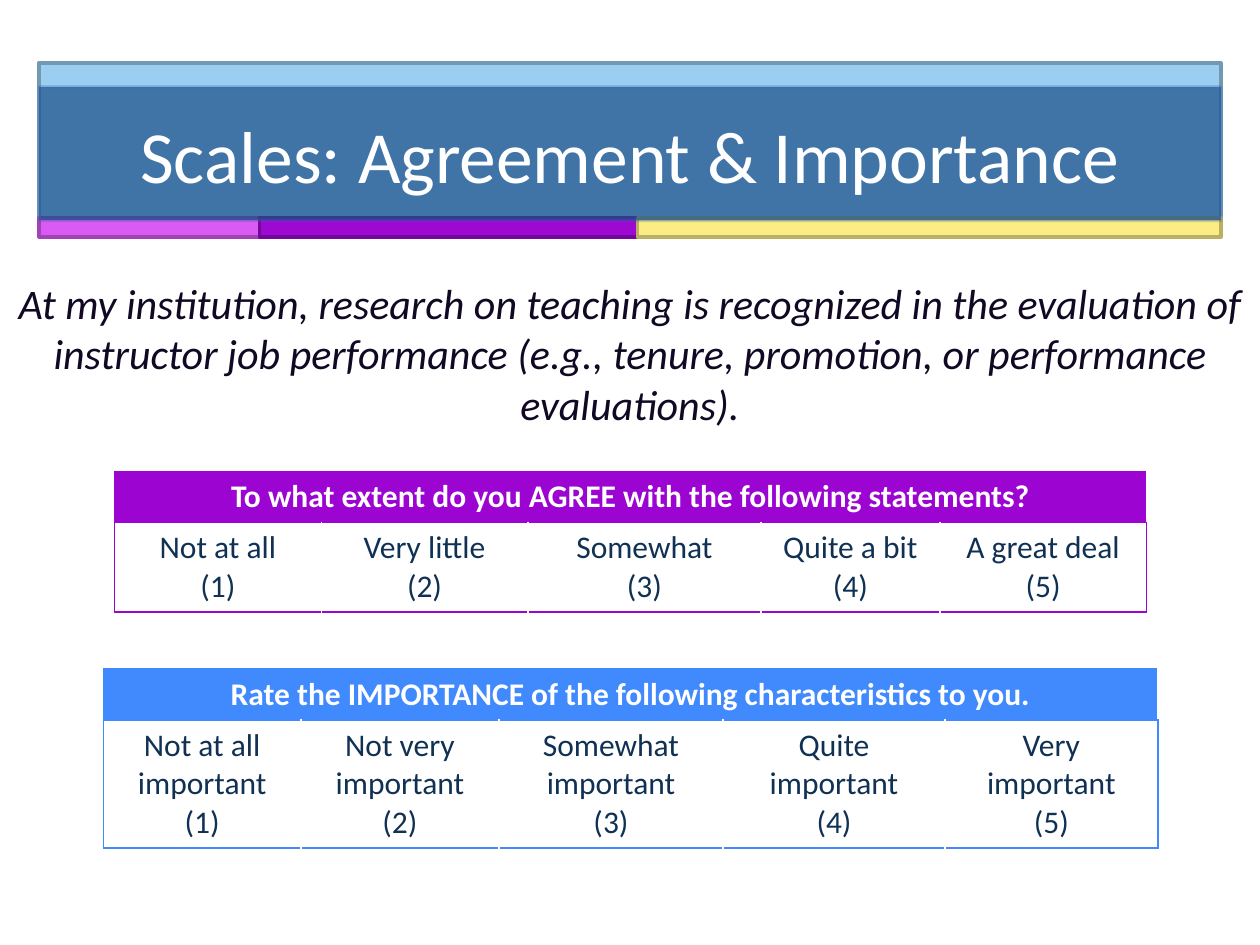
from lxml.etree import SubElement
from pptx import Presentation
from pptx.dml.color import RGBColor
from pptx.enum.shapes import MSO_SHAPE
from pptx.enum.text import MSO_ANCHOR, MSO_AUTO_SIZE, PP_ALIGN
from pptx.oxml.ns import qn
from pptx.util import Inches, Pt

WHITE = RGBColor(0xFF, 0xFF, 0xFF)
SKY = RGBColor(0x9C, 0xCE, 0xF1)
SKY_EDGE = RGBColor(0x73, 0x98, 0xB2)
PINK = RGBColor(0xDA, 0x5A, 0xF4)
PINK_EDGE = RGBColor(0xA1, 0x43, 0xB5)
VIOLET = RGBColor(0x9D, 0x09, 0xD1)
VIOLET_EDGE = RGBColor(0x74, 0x07, 0x9B)
YELLOW = RGBColor(0xFB, 0xEC, 0x85)
YELLOW_EDGE = RGBColor(0xBA, 0xAF, 0x62)
TITLE_BLUE = RGBColor(0x1A, 0x4F, 0x88)
TITLE_EDGE = RGBColor(0x34, 0x69, 0xBD)
INK = RGBColor(0x11, 0x08, 0x23)
NAVY = RGBColor(0x10, 0x31, 0x54)
PURPLE = RGBColor(0x9C, 0x04, 0xD1)
BLUE = RGBColor(0x40, 0x8A, 0xFE)

FONT = "Calibri"


def place(shape, left, top, width, height):
    shape.left, shape.top = Inches(left), Inches(top)
    shape.width, shape.height = Inches(width), Inches(height)


def format_paragraph(paragraph, size, color, bold=False, italic=False):
    paragraph.alignment = PP_ALIGN.CENTER
    font = paragraph.font
    font.name, font.size = FONT, Pt(size)
    font.bold, font.italic = bold, italic
    font.color.rgb = color


def paint(shape, fill, edge):
    shape.fill.solid()
    shape.fill.fore_color.rgb = fill
    shape.line.color.rgb = edge
    shape.line.width = Pt(2)


def set_opacity(color_parent, percent):
    color = color_parent.find(qn("a:solidFill")).find(qn("a:srgbClr"))
    SubElement(color, qn("a:alpha"), val=str(percent * 1000))


def add_title_banner(slide, left, top, width):
    title = slide.shapes.title

    def add_band(x, y, band_width, height, fill, edge):
        band = slide.shapes.add_shape(
            MSO_SHAPE.RECTANGLE, Inches(x), Inches(y), Inches(band_width), Inches(height))
        band.shadow.inherit = False
        paint(band, fill, edge)
        title._element.addprevious(band._element)

    add_band(left, top, width, 1.24, SKY, SKY_EDGE)
    x = left
    for strip_width, fill, edge in (
        (1.75, PINK, PINK_EDGE),
        (3, VIOLET, VIOLET_EDGE),
        (width - 4.75, YELLOW, YELLOW_EDGE),
    ):
        add_band(x, top + 1.23, strip_width, 0.15, fill, edge)
        x += strip_width

    place(title, left, top + 0.19, width, 1.06)
    paint(title, TITLE_BLUE, TITLE_EDGE)
    properties = title._element.spPr
    set_opacity(properties, 70)
    set_opacity(properties.find(qn("a:ln")), 25)
    frame = title.text_frame
    frame.text = "Scales: Agreement & Importance"
    frame.auto_size = MSO_AUTO_SIZE.NONE
    frame.vertical_anchor = MSO_ANCHOR.MIDDLE
    format_paragraph(frame.paragraphs[0], 42, WHITE)


def add_statement(slide, left, top, width, height):
    body = slide.placeholders[1]
    place(body, left, top, width, height)
    frame = body.text_frame
    frame.text = (
        "At my institution, research on teaching is recognized in the evaluation of "
        "instructor job performance (e.g., tenure, promotion, or performance evaluations).")
    frame.auto_size = MSO_AUTO_SIZE.NONE
    frame.margin_top = Inches(0.27)
    paragraph = frame.paragraphs[0]
    format_paragraph(paragraph, 24, INK, italic=True)
    paragraph.space_before = Pt(0)
    properties = paragraph._p.get_or_add_pPr()
    properties.set("marL", "0")
    properties.set("indent", "0")
    SubElement(properties, qn("a:buNone"))


def format_cell(cell, sides, accent, fill):
    properties = cell._tc.get_or_add_tcPr()
    for side in sides:
        line = SubElement(properties, qn(f"a:ln{side}"), w=str(Pt(1)))
        SubElement(SubElement(line, qn("a:solidFill")), qn("a:srgbClr"), val=str(accent))
    cell.fill.solid()
    cell.fill.fore_color.rgb = fill


def add_scale(slide, left, top, column_widths, answer_height, accent, question, answers):
    header_height = 0.4
    table = slide.shapes.add_table(
        2, len(answers), Inches(left), Inches(top),
        Inches(sum(column_widths)), Inches(header_height + answer_height)).table
    table.first_row = table.horz_banding = False
    table.rows[0].height = Inches(header_height)
    table.rows[1].height = Inches(answer_height)

    last = len(answers) - 1
    for index, (width, answer) in enumerate(zip(column_widths, answers)):
        table.columns[index].width = Inches(width)
        outer = ("L" if index == 0 else "") + ("R" if index == last else "")
        format_cell(table.cell(0, index), outer + "TB", accent, accent)
        cell = table.cell(1, index)
        format_cell(cell, outer + "TB", accent, WHITE)
        cell.vertical_anchor = MSO_ANCHOR.MIDDLE
        cell.text = f"{answer}\n({index + 1})"
        for paragraph in cell.text_frame.paragraphs:
            format_paragraph(paragraph, 18, NAVY)

    header = table.cell(0, 0)
    header.merge(table.cell(0, last))
    header.text = question
    format_paragraph(header.text_frame.paragraphs[0], 18, WHITE, bold=True)


def main():
    presentation = Presentation()
    presentation.slide_width, presentation.slide_height = Inches(10), Inches(7.5)
    slide = presentation.slides.add_slide(presentation.slide_layouts[1])

    add_title_banner(slide, 0.31, 0.5, 9.38)
    add_statement(slide, 0, 1.93, 10, 5.41)
    add_scale(
        slide, 0.91, 3.74, (1.64, 1.64, 1.85, 1.42, 1.64), 0.71, PURPLE,
        "To what extent do you AGREE with the following statements?",
        ("Not at all", "Very little", "Somewhat", "Quite a bit", "A great deal"))
    add_scale(
        slide, 0.82, 5.31, (1.57, 1.57, 1.78, 1.76, 1.69), 1.01, BLUE,
        "Rate the IMPORTANCE of the following characteristics to you.",
        [f"{level} important" for level in
         ("Not at all", "Not very", "Somewhat", "Quite", "Very")])

    presentation.save("out.pptx")


if __name__ == "__main__":
    main()
